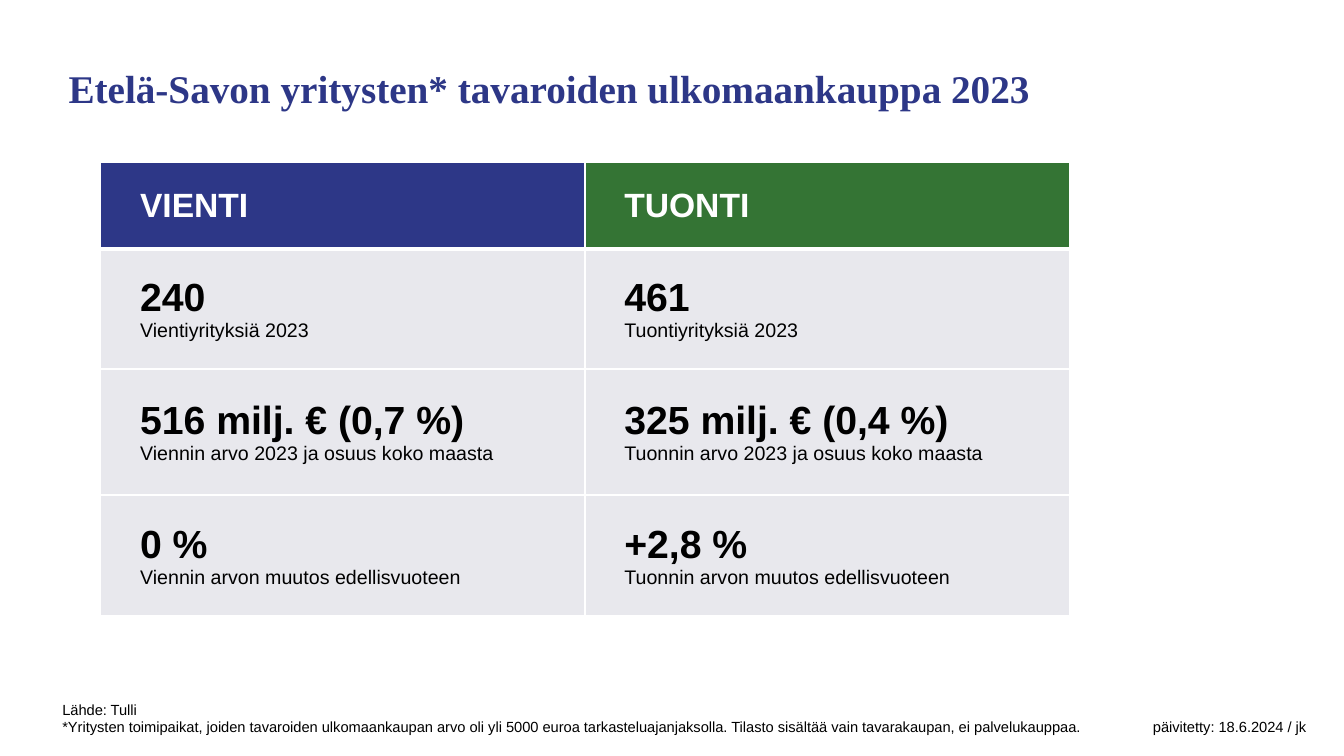
import pptx
import pptx.dml.color
import pptx.enum.text
import pptx.oxml
import pptx.oxml.ns
import pptx.util

NAVY, GREEN, GREY, WHITE, BLACK = "2D3787", "347434", "E8E8ED", "FFFFFF", "000000"
HEADINGS = [("VIENTI", NAVY), ("TUONTI", GREEN)]
FIGURES = [
    [("240", "Vientiyrityksiä 2023"), ("461", "Tuontiyrityksiä 2023")],
    [("516 milj. € (0,7 %)", "Viennin arvo 2023 ja osuus koko maasta"),
     ("325 milj. € (0,4 %)", "Tuonnin arvo 2023 ja osuus koko maasta")],
    [("0 %", "Viennin arvon muutos edellisvuoteen"),
     ("+2,8 %", "Tuonnin arvon muutos edellisvuoteen")],
]
FOOTNOTE = ("*Yritysten toimipaikat, joiden tavaroiden ulkomaankaupan arvo oli yli 5000 euroa "
            "tarkasteluajanjaksolla. Tilasto sisältää vain tavarakaupan, ei palvelukauppaa.")
UPDATED = "päivitetty: 18.6.2024 / jk"


def colour(hex_string):
    """Turn a hex string into a colour."""
    return pptx.dml.color.RGBColor.from_string(hex_string)


def apply(target, values):
    """Set each named attribute on the target."""
    for name, value in values.items():
        setattr(target, name, value)


class TradeSlide:
    """Draw slide elements placed in percent of the slide's size."""

    heading = {"size": 24, "bold": True, "hue": WHITE}
    figure = {"size": 28, "bold": True}
    caption = {"size": 14}

    def __init__(self, deck):
        """Add a blank slide to the deck."""
        self.width, self.height = deck.slide_width, deck.slide_height
        self.slide = deck.slides.add_slide(deck.slide_layouts[6])

    def place(self, left, top, width, height):
        """Convert percentages to lengths."""
        return (int(self.width * left / 100), int(self.height * top / 100),
                int(self.width * width / 100), int(self.height * height / 100))

    def inset(self, holder, margins, anchor):
        """Set the margins and anchor of a text frame or cell."""
        sides = ("margin_left", "margin_top", "margin_right", "margin_bottom")
        apply(holder, dict(zip(sides, map(pptx.util.Inches, margins))))
        holder.vertical_anchor = anchor

    def compose(self, frame, lines, tab=None):
        """Fill a text frame with one styled paragraph per line."""
        for index, (text, style) in enumerate(lines):
            paragraph = frame.add_paragraph() if index else frame.paragraphs[0]
            if tab and "\t" in text:
                paragraph._p.get_or_add_pPr().append(pptx.oxml.parse_xml(
                    f'<a:tabLst {pptx.oxml.ns.nsdecls("a")}>'
                    f'<a:tab pos="{pptx.util.Inches(tab)}" algn="r"/></a:tabLst>'))
            run = paragraph.add_run()
            run.text = text
            apply(run.font, {"name": style.get("face", "Arial"),
                             "size": pptx.util.Pt(style["size"]),
                             "bold": style.get("bold", False)})
            run.font.color.rgb = colour(style.get("hue", BLACK))

    def text(self, area, lines, margins=(0.1, 0.05, 0.1, 0.05),
             anchor=pptx.enum.text.MSO_ANCHOR.TOP, tab=None):
        """Add a text box."""
        frame = self.slide.shapes.add_textbox(*self.place(*area)).text_frame
        frame.word_wrap = True
        self.inset(frame, margins, anchor)
        self.compose(frame, lines, tab)

    def cell(self, cell, lines, fill, top=1, bottom=1):
        """Fill one table cell and rule its four sides."""
        self.inset(cell, (0.39, 0.2, 0.2, 0.2), pptx.enum.text.MSO_ANCHOR.MIDDLE)
        self.compose(cell.text_frame, lines)
        cell.fill.solid()
        cell.fill.fore_color.rgb = colour(fill)
        properties = cell._tc.get_or_add_tcPr()
        for index, (side, points) in enumerate(zip("LRTB", (1, 1, top, bottom))):
            properties.insert(index, pptx.oxml.parse_xml(
                f'<a:ln{side} {pptx.oxml.ns.nsdecls("a")} w="{pptx.util.Pt(points)}">'
                f'<a:solidFill><a:srgbClr val="{WHITE}"/></a:solidFill></a:ln{side}>'))

    def table(self, area, row_shares, headings, figures):
        """Add the table of headings and figures."""
        grid = self.slide.shapes.add_table(
            len(row_shares), len(headings), *self.place(*area)).table
        apply(grid, {"first_row": False, "horz_banding": False})
        for row, share in zip(grid.rows, row_shares):
            row.height = int(self.height * share / 100)
        for column, (name, fill) in enumerate(headings):
            self.cell(grid.cell(0, column), [(name, self.heading)], fill, bottom=3)
        for row, pairs in enumerate(figures, 1):
            for column, (value, label) in enumerate(pairs):
                self.cell(grid.cell(row, column),
                          [(value, self.figure), (label, self.caption)],
                          GREY, top=3 if row == 1 else 1)


def main():
    """Build and save the slide."""
    deck = pptx.Presentation()
    apply(deck, {"slide_width": pptx.util.Inches(13.33), "slide_height": pptx.util.Inches(7.5)})
    trade = TradeSlide(deck)
    title = {"size": 28, "bold": True, "hue": NAVY, "face": "Times New Roman"}
    trade.text((5.1, 8.8, 73.2, 6.53),
               [("Etelä-Savon yritysten* tavaroiden ulkomaankauppa 2023", title)],
               (0, 0, 0, 0.05), pptx.enum.text.MSO_ANCHOR.BOTTOM)
    note = {"size": 10.5}
    trade.text((3.9, 92, 95.72, 6),
               [("Lähde: Tulli", note), (f"{FOOTNOTE}\t{UPDATED}", note)], tab=12.34)
    rows = (11.47, 15.87, 16.67, 16)
    trade.table((7.5, 21.47, 72.06, sum(rows)), rows, HEADINGS, FIGURES)
    deck.save("out.pptx")


if __name__ == "__main__":
    main()
